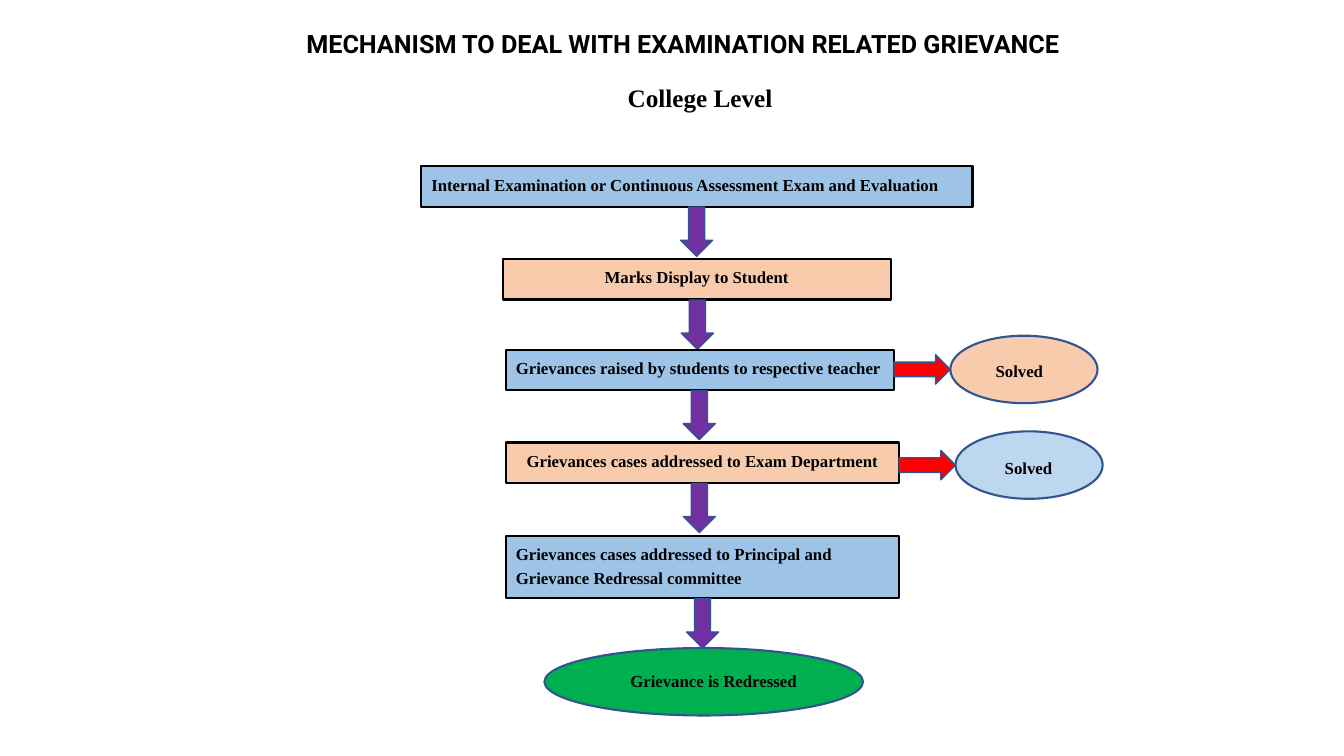
from pptx import Presentation
from pptx import util as u
from pptx.dml.color import RGBColor
from pptx.enum import shapes, text

BLACK = RGBColor(0x00, 0x00, 0x00)
NAVY = RGBColor(0x32, 0x54, 0x91)
BLUE = RGBColor(0x9D, 0xC3, 0xE6)
PALE_BLUE = RGBColor(0xBD, 0xD7, 0xEE)
PEACH = RGBColor(0xF8, 0xCB, 0xAD)
PURPLE = RGBColor(0x70, 0x30, 0xA0)
RED = RGBColor(0xFF, 0x00, 0x00)
GREEN = RGBColor(0x00, 0xB0, 0x50)

LEFT, CENTER = text.PP_ALIGN.LEFT, text.PP_ALIGN.CENTER
SHAPE = shapes.MSO_SHAPE
DOWN_WIDTH, DOWN_HEIGHT = 0.81, 1.24
RIGHT_WIDTH, RIGHT_HEIGHT = 1.42, 0.74
OVAL_HEIGHT = 1.7

# wording, left, top, width, height, fill, alignment, left of the arrow below
STEPS = [
    ("Internal Examination or Continuous Assessment Exam and Evaluation",
     10.62, 4.19, 13.89, 1.02, BLUE, LEFT, 17.15),
    ("Marks Display to Student",
     12.67, 6.53, 9.78, 1.02, PEACH, CENTER, 17.17),
    ("Grievances raised by students to respective teacher",
     12.75, 8.81, 9.78, 1.02, BLUE, LEFT, 17.22),
    ("Grievances cases addressed to Exam Department",
     12.75, 11.15, 9.91, 1.02, PEACH, CENTER, 17.22),
    ("Grievances cases addressed to Principal and Grievance Redressal committee",
     12.75, 13.51, 9.91, 1.57, BLUE, LEFT, 17.3),
]
# right edge of the step, top of the oval, fill, left and top of the label
SOLVED = [
    (22.53, 8.46, PEACH, 24.71, 8.89),
    (22.66, 10.87, PALE_BLUE, 24.94, 11.33),
]


class Flowchart:
    def __init__(self, slide, font="Times New Roman", size=12):
        self.slide = slide
        self.font = font
        self.size = size

    def set_text(self, shape, wording, align=LEFT, font=None, size=None, spaced=True):
        frame = shape.text_frame
        frame.word_wrap = True
        frame.vertical_anchor = text.MSO_ANCHOR.TOP
        paragraph = frame.paragraphs[0]
        paragraph.text = wording
        paragraph.alignment = align
        if spaced:
            paragraph.line_spacing = 1.15
            paragraph.space_after = u.Pt(10)
        paragraph.font.name = font or self.font
        paragraph.font.size = u.Pt(size or self.size)
        paragraph.font.bold = True
        paragraph.font.color.rgb = BLACK
        return paragraph

    def heading(self, wording, *place, **style):
        box = self.slide.shapes.add_textbox(*map(u.Cm, place))
        return self.set_text(box, wording, size=18, **style)

    def figure(self, kind, *place, fill, line=None, weight=1.5):
        shape = self.slide.shapes.add_shape(kind, *map(u.Cm, place))
        shape.shadow.inherit = False
        shape.fill.solid()
        shape.fill.fore_color.rgb = fill
        if line is None:
            shape.line.fill.background()
        else:
            shape.line.color.rgb = line
            shape.line.width = u.Pt(weight)
        return shape

    def step(self, wording, *place, fill, align):
        box = self.figure(SHAPE.RECTANGLE, *place, fill=fill, line=BLACK)
        self.set_text(box, wording, align)

    def down_arrow(self, left, top):
        self.figure(SHAPE.DOWN_ARROW, left, top, DOWN_WIDTH, DOWN_HEIGHT,
                    fill=PURPLE, line=NAVY, weight=1)

    def right_arrow(self, left, top):
        self.figure(SHAPE.RIGHT_ARROW, left, top, RIGHT_WIDTH, RIGHT_HEIGHT,
                    fill=RED, line=NAVY, weight=1)

    def outcome(self, wording, left, top, width, fill, label_place):
        """Draw an oval with a label of the same colour on it."""
        self.figure(SHAPE.OVAL, left, top, width, OVAL_HEIGHT, fill=fill, line=NAVY)
        label = self.figure(SHAPE.RECTANGLE, *label_place, fill=fill)
        self.set_text(label, wording, CENTER)


def main():
    presentation = Presentation()
    presentation.slide_width = u.Cm(33.87)
    presentation.slide_height = u.Cm(19.05)
    slide = presentation.slides.add_slide(presentation.slide_layouts[6])
    chart = Flowchart(slide)

    chart.heading("MECHANISM TO DEAL WITH EXAMINATION RELATED GRIEVANCE",
                  7.47, 0.58, 21.62, 1.02, font="Roboto", spaced=False)
    level = chart.heading("College Level", 14.3, 1.83, 5.69, 1.09)
    level_properties = level._p.get_or_add_pPr()
    level_properties.set("marL", str(u.Cm(1.27)))
    level_properties.set("indent", "0")

    chart.outcome("Grievance is Redressed", 13.72, 16.33, 8.03, GREEN,
                  (14.96, 16.71, 6.05, 0.84))
    for wording, left, top, width, height, fill, align, arrow_left in STEPS:
        chart.step(wording, left, top, width, height, fill=fill, align=align)
        chart.down_arrow(arrow_left, top + height + 0.01)
    for step_right, top, fill, label_left, label_top in SOLVED:
        chart.right_arrow(step_right, top + (OVAL_HEIGHT - RIGHT_HEIGHT) / 2)
        chart.outcome("Solved", step_right + RIGHT_WIDTH, top, 3.71, fill,
                      (label_left, label_top, 1.96, 0.76))

    presentation.save("out.pptx")


if __name__ == "__main__":
    main()
